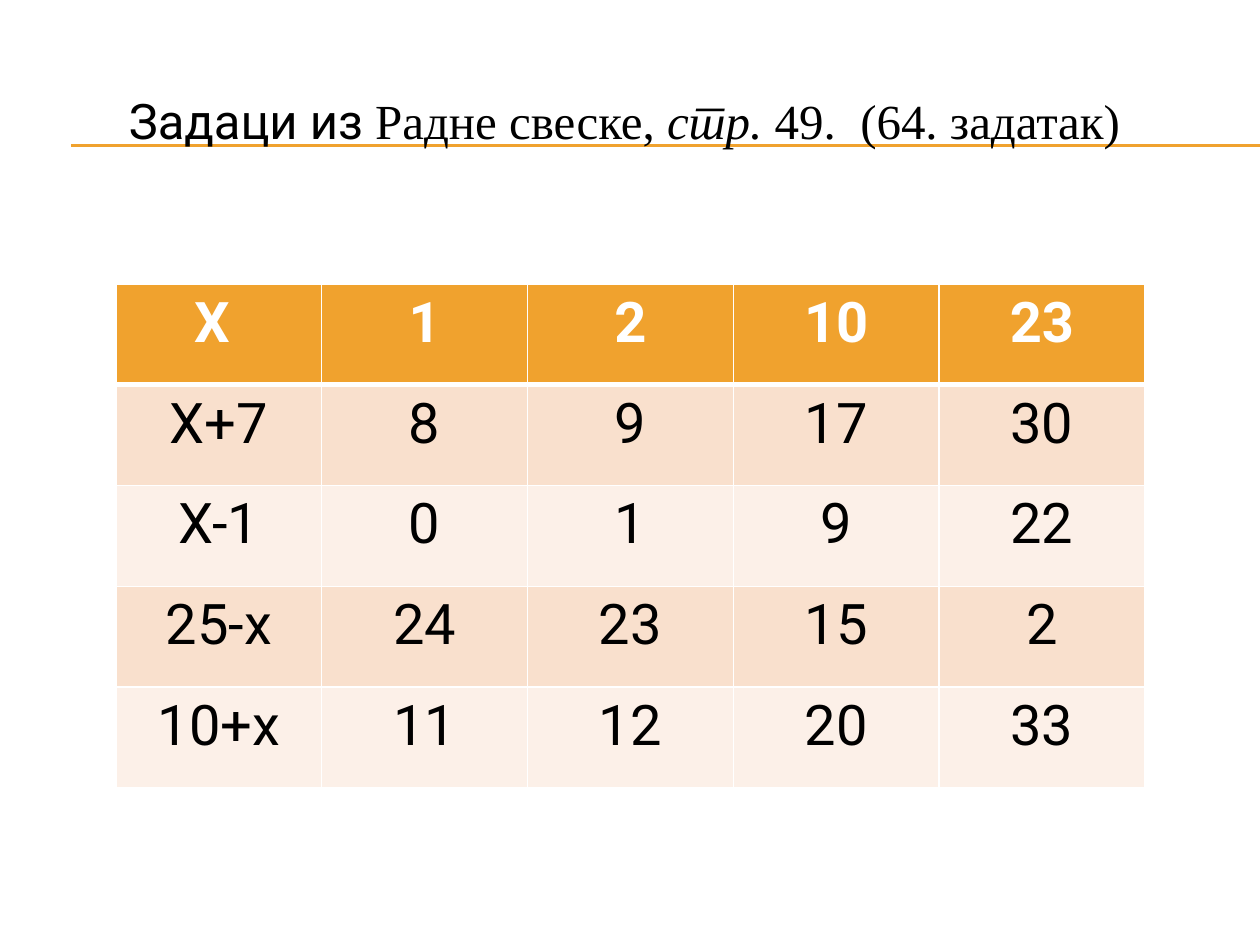
from lxml.etree import SubElement
from pptx import Presentation
from pptx.dml.color import RGBColor
from pptx.enum.lang import MSO_LANGUAGE_ID as Lang
from pptx.enum.shapes import MSO_CONNECTOR as Conn
from pptx.enum.text import PP_ALIGN as Align
from pptx.oxml.ns import qn
from pptx.util import Emu, Pt

BLACK = RGBColor(0x00, 0x00, 0x00)
WHITE = RGBColor(0xFF, 0xFF, 0xFF)
ORANGE = RGBColor(0xF0, 0xA2, 0x2E)
PEACH = RGBColor(0xF9, 0xE0, 0xCD)
CREAM = RGBColor(0xFC, 0xF0, 0xE8)

SANS = "Roboto"
SERIF = "Times New Roman"

TITLE = [
    ("Задаци из ", SANS, False),
    ("Радне свеске, ", SERIF, False),
    ("стр. ", SERIF, True),
    ("49.  (64. задатак)", SERIF, False),
]
ROWS = [
    ["Х ", "1", "2", "10", "23"],
    ["Х+7", "8", "9", "17", "30"],
    ["Х-1", "0", "1", "9", "22"],
    ["25-х", "24", "23", "15", "2"],
    ["10+х", "11", "12", "20", "33"],
]


def px(n):
    return Emu(round(n * 914400 / 126))


class Page:
    """Holds the style and the current slide."""

    title_size = Pt(28)
    cell_size = Pt(32)
    thin = Pt(1)
    thick = Pt(3)

    def __init__(self, slide):
        self.slide = slide
        self.shapes = slide.shapes

    def style(self, run, name, size, color, bold=False, italic=False):
        font = run.font
        font.name, font.size = name, size
        font.bold, font.italic = bold, italic
        font.color.rgb = color
        font.language_id = Lang.SERBIAN_CYRILLIC

    def rule(self, x1, x2, y):
        """Draw a level line."""
        line = self.shapes.add_connector(Conn.STRAIGHT, px(x1), px(y), px(x2), px(y))
        line.line.color.rgb = ORANGE
        line.line.width = Pt(0.75)
        SubElement(line._element.spPr, qn("a:effectLst"))

    def title(self, x, y, w, h, parts):
        frame = self.shapes.add_textbox(px(x), px(y), px(w), px(h)).text_frame
        frame.word_wrap = True
        para = frame.paragraphs[0]
        para.alignment = Align.CENTER
        for text, name, italic in parts:
            run = para.add_run()
            run.text = text
            self.style(run, name, self.title_size, BLACK, italic=italic)

    def edge(self, cell, side, width):
        """Give one side of a cell a white border."""
        line = SubElement(cell._tc.get_or_add_tcPr(), qn(f"a:ln{side}"), w=str(width))
        fill = SubElement(line, qn("a:solidFill"))
        SubElement(fill, qn("a:srgbClr"), val=str(WHITE))

    def cell(self, cell, text, row):
        head = row == 0
        cell.text_frame.text = text
        para = cell.text_frame.paragraphs[0]
        para.alignment = Align.CENTER
        color = WHITE if head else BLACK
        self.style(para.runs[0], SANS, self.cell_size, color, bold=head)
        heavy = {0: "B", 1: "T"}.get(row)
        for side in "LRTB":
            self.edge(cell, side, self.thick if side == heavy else self.thin)
        cell.fill.solid()
        cell.fill.fore_color.rgb = ORANGE if head else (CREAM, PEACH)[row % 2]

    def table(self, x, y, w, h, rows):
        grid = self.shapes.add_table(
            len(rows), len(rows[0]), px(x), px(y), px(w), px(h)
        ).table
        for r, row in enumerate(rows):
            for c, text in enumerate(row):
                self.cell(grid.cell(r, c), text, r)


def main():
    deck = Presentation()
    deck.slide_width, deck.slide_height = px(1260), px(945)
    page = Page(deck.slides.add_slide(deck.slide_layouts[6]))
    for y in (145, 146):
        page.rule(71, 1260, y)
    page.title(84, 84, 1081, 131, TITLE)
    page.table(116, 284, 1029, 504, ROWS)
    deck.save("out.pptx")


if __name__ == "__main__":
    main()
